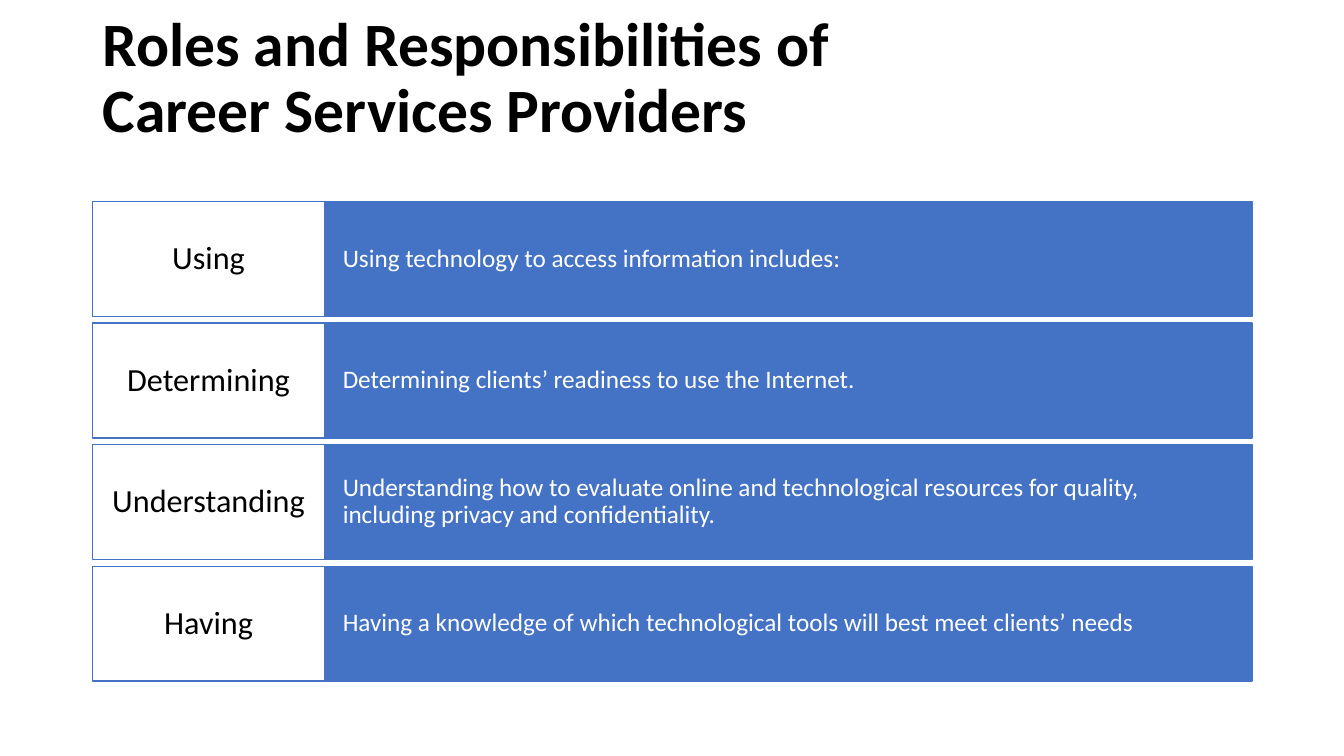
from pptx import Presentation
from pptx.dml.color import RGBColor
from pptx.enum.shapes import MSO_SHAPE
from pptx.enum.text import MSO_ANCHOR, PP_ALIGN
from pptx.util import Inches, Pt

RECTANGLE = MSO_SHAPE.RECTANGLE
MIDDLE = MSO_ANCHOR.MIDDLE
LEFT, CENTER = PP_ALIGN.LEFT, PP_ALIGN.CENTER
BLUE, WHITE, BLACK = "4472C4", "FFFFFF", "000000"


def color(hex_code):
    return RGBColor.from_string(hex_code)


def write_text(shape, text, size, font_color, insets, bold=False, align=LEFT):
    """Fill a shape with one paragraph; insets are left, top, right, bottom."""
    frame = shape.text_frame
    frame.word_wrap = True
    frame.vertical_anchor = MIDDLE
    (frame.margin_left, frame.margin_top,
     frame.margin_right, frame.margin_bottom) = [Inches(inset) for inset in insets]
    paragraph = frame.paragraphs[0]
    paragraph.text = text
    paragraph.alignment = align
    paragraph.line_spacing = 0.9
    for run in paragraph.runs:
        run.font.name = "Calibri"
        run.font.size = Pt(size)
        run.font.bold = bold
        run.font.color.rgb = color(font_color)


presentation = Presentation()
presentation.slide_width = Inches(13.33)
presentation.slide_height = Inches(7.5)
slide = presentation.slides.add_slide(presentation.slide_layouts[6])

# Grid: a label column and a description column, rows at an equal pitch
GRID_LEFT, GRID_TOP = 0.92, 2.0
GRID_WIDTH = 11.5
LABEL_WIDTH = GRID_WIDTH / 5
ROW_HEIGHT, ROW_GAP = 1.14, 0.066

# Title, raised within its box by the deep bottom inset
title = slide.shapes.add_textbox(
    Inches(GRID_LEFT), Inches(0.4), Inches(GRID_WIDTH), Inches(1.45))
write_text(title, """Roles and Responsibilities of
Career Services Providers""", size=44, font_color=BLACK,
           insets=(0.1, 0.05, 0.1, 0.72), bold=True)

# Responsibilities
responsibilities = [
    ("Using", "Using technology to access information includes:"),
    ("Determining", "Determining clients’ readiness to use the Internet."),
    ("Understanding", "Understanding how to evaluate online and technological "
     "resources for quality, including privacy and confidentiality."),
    ("Having", "Having a knowledge of which technological tools will best "
     "meet clients’ needs"),
]

for row, (label, description) in enumerate(responsibilities):
    top = GRID_TOP + row * (ROW_HEIGHT + ROW_GAP)
    cells = [
        (GRID_LEFT + LABEL_WIDTH, GRID_WIDTH - LABEL_WIDTH, BLUE, description,
         dict(size=18, font_color=WHITE, insets=(0.18, 0.29, 0.18, 0.29))),
        (GRID_LEFT, LABEL_WIDTH, WHITE, label,
         dict(size=23, font_color=BLACK, insets=(0.12, 0.11, 0.12, 0.11),
              align=CENTER)),
    ]
    for left, width, fill, text, text_format in cells:
        box = slide.shapes.add_shape(
            RECTANGLE, Inches(left), Inches(top), Inches(width), Inches(ROW_HEIGHT))
        box.shadow.inherit = False
        box.fill.solid()
        box.fill.fore_color.rgb = color(fill)
        box.line.color.rgb = color(BLUE)
        box.line.width = Pt(1)
        write_text(box, text, **text_format)

presentation.save("out.pptx")
